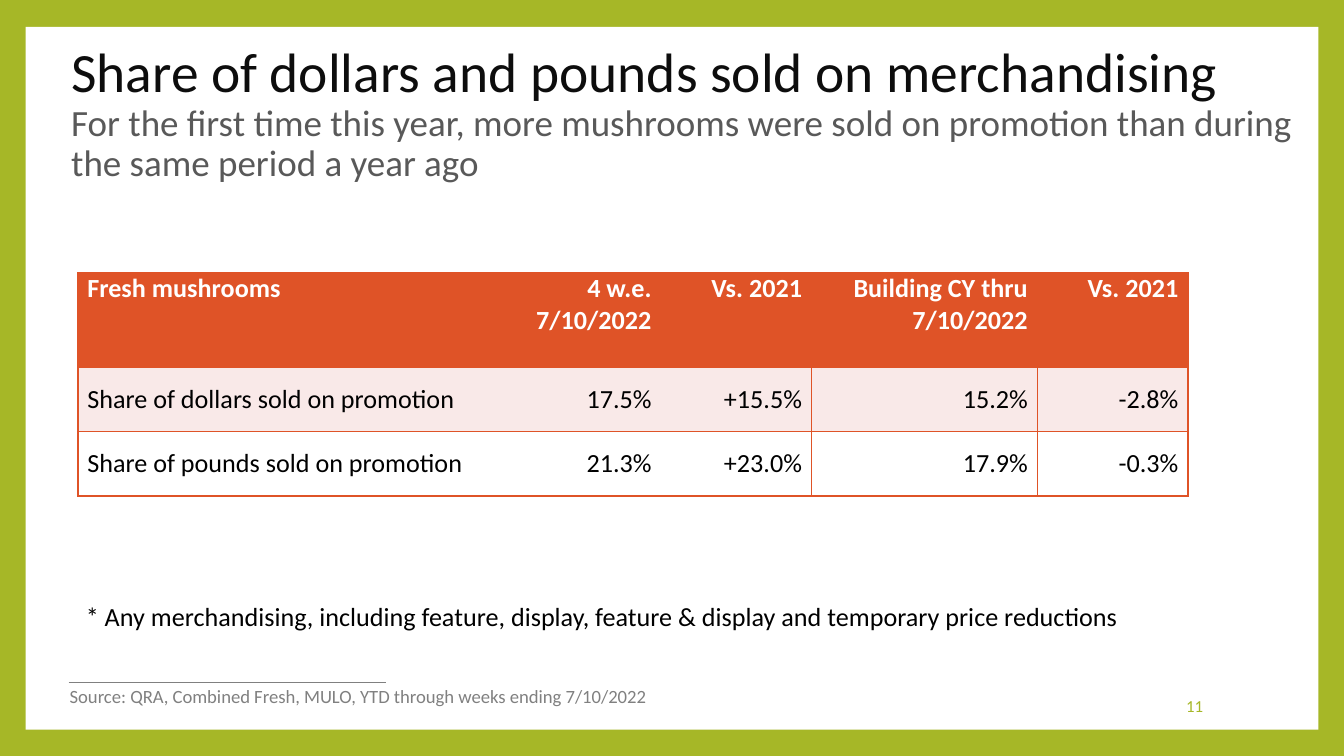
"""Build the slide on mushroom shares sold on merchandising."""
from lxml.etree import SubElement
from pptx import Presentation
from pptx.dml.color import RGBColor
from pptx.enum.shapes import MSO_CONNECTOR, MSO_SHAPE
from pptx.enum.text import MSO_ANCHOR, MSO_AUTO_SIZE, PP_ALIGN
from pptx.oxml.ns import qn
from pptx.util import Inches, Pt

WIDTH = 10
HEIGHT = WIDTH * 9 / 16
FONT = "Calibri"
COLORS = {
    "green": "A6B727", "orange": "DF5327", "blush": "F9E9E8", "white": "FFFFFF",
    "black": "000000", "ink": "0D0D0D", "slate": "595959", "gray": "808080",
}
TITLE = "Share of dollars and pounds sold on merchandising"
SUBTITLE = ("For the first time this year, more mushrooms were sold on promotion "
            "than during the same period a year ago")
NOTE = ("* Any merchandising, including feature, display, feature & display "
        "and temporary price reductions")
SOURCE = "Source: QRA, Combined Fresh, MULO, YTD through weeks ending 7/10/2022"
PAGE_NUMBER = "11"
ROWS = [
    ["Fresh mushrooms", "4 w.e. 7/10/2022", "Vs. 2021", "Building CY thru 7/10/2022", "Vs. 2021"],
    ["Share of dollars sold on promotion", "17.5%", "+15.5%", "15.2%", "-2.8%"],
    ["Share of pounds sold on promotion", "21.3%", "+23.0%", "17.9%", "-0.3%"],
]
ROW_FILLS = ["orange", "blush", "white"]
COLUMN_WIDTHS = [3.06, 0.13, 1.1, 1.12, 1.68, 1.12]
ROW_HEIGHTS = [0.7, 0.48, 0.48]
RULED_EDGES = {0, 4, 5, 6}


def color(name):
    """Return the named palette color."""
    return RGBColor.from_string(COLORS[name])


def add_span(para, text, size, ink, bold=False):
    """Append formatted text to a paragraph."""
    span = para.add_run()
    span.text = text
    span.font.name, span.font.size, span.font.bold = FONT, Pt(size), bold
    span.font.color.rgb = color(ink)


def add_text(page, text, left, top, width, height, size, ink,
             align=PP_ALIGN.LEFT, anchor=MSO_ANCHOR.TOP, wrap=False):
    """Add a one-paragraph text box."""
    box = page.shapes.add_textbox(*map(Inches, (left, top, width, height)))
    frame = box.text_frame
    frame.word_wrap, frame.vertical_anchor = wrap, anchor
    para = frame.paragraphs[0]
    para.alignment = align
    add_span(para, text, size, ink)


def set_borders(cell, first, last):
    """Rule the top and bottom, and the sides that lie on ruled edges."""
    properties = cell._tc.get_or_add_tcPr()
    shown = {"lnL": first in RULED_EDGES, "lnR": last in RULED_EDGES, "lnT": True, "lnB": True}
    for position, (tag, visible) in enumerate(shown.items()):
        line = SubElement(properties, qn(f"a:{tag}"), w=str(Pt(1)))
        if visible:
            fill = SubElement(line, qn("a:solidFill"))
            SubElement(fill, qn("a:srgbClr"), val=COLORS["orange"])
        else:
            SubElement(line, qn("a:noFill"))
        properties.insert(position, line)


def add_title(page):
    """Format the title placeholder with its title and subtitle."""
    title = page.shapes.title
    title.left, title.top, title.width, title.height = map(Inches, (0.43, 0.31, 9.29, 1.09))
    frame = title.text_frame
    frame.word_wrap, frame.auto_size = True, MSO_AUTO_SIZE.NONE
    frame.vertical_anchor = MSO_ANCHOR.MIDDLE
    para = frame.paragraphs[0]
    para.alignment, para.line_spacing = PP_ALIGN.LEFT, 0.9
    add_span(para, TITLE, 29.7, "ink")
    para.add_line_break()
    add_span(para, SUBTITLE, 19.8, "slate")


def add_share_table(page):
    """Add the table, with the narrow second column merged left or right."""
    table = page.shapes.add_table(
        len(ROWS), len(COLUMN_WIDTHS), Inches(0.58), Inches(2.03),
        Inches(sum(COLUMN_WIDTHS)), Inches(sum(ROW_HEIGHTS))).table
    for column, width in zip(table.columns, COLUMN_WIDTHS):
        column.width = Inches(width)
    for row, height in zip(table.rows, ROW_HEIGHTS):
        row.height = Inches(height)
    for row, (texts, fill) in enumerate(zip(ROWS, ROW_FILLS)):
        header = row == 0
        starts = [0, 1 if header else 2, 3, 4, 5]
        ends = starts[1:] + [len(COLUMN_WIDTHS)]
        for text, first, last in zip(texts, starts, ends):
            cell = table.cell(row, first)
            if last - first > 1:
                cell.merge(table.cell(row, last - 1))
            cell.margin_left = cell.margin_right = Inches(0.07)
            cell.margin_top = cell.margin_bottom = 0
            cell.vertical_anchor = MSO_ANCHOR.TOP if header else MSO_ANCHOR.MIDDLE
            para = cell.text_frame.paragraphs[0]
            para.alignment = PP_ALIGN.RIGHT if first else PP_ALIGN.LEFT
            add_span(para, text, 14, "white" if header else "black", bold=header)
            for column in range(first, last):
                part = table.cell(row, column)
                part.fill.solid()
                part.fill.fore_color.rgb = color(fill)
                set_borders(part, first, last)


def main():
    """Assemble and save the slide."""
    deck = Presentation()
    deck.slide_width, deck.slide_height = Inches(WIDTH), Inches(HEIGHT)
    page = deck.slides.add_slide(deck.slide_layouts[5])
    page.background.fill.solid()
    page.background.fill.fore_color.rgb = color("green")

    panel = page.shapes.add_shape(
        MSO_SHAPE.RECTANGLE, *map(Inches, (0.19, 0.2, WIDTH - 0.38, 5.23)))
    panel.shadow.inherit = False
    panel.fill.solid()
    panel.fill.fore_color.rgb = color("white")
    panel.line.fill.background()
    page.shapes._spTree.insert(2, panel._element)

    rule = page.shapes.add_connector(
        MSO_CONNECTOR.STRAIGHT, *map(Inches, (0.51, 5.08, 2.87, 5.08)))
    rule.line.color.rgb, rule.line.width = color("gray"), Pt(0.79)
    SubElement(rule._element.spPr, qn("a:effectLst"))

    add_title(page)
    add_text(page, PAGE_NUMBER, 7.65, 5.1, 1.4, 0.3, 9, "green",
             align=PP_ALIGN.RIGHT, anchor=MSO_ANCHOR.MIDDLE, wrap=True)
    add_text(page, SOURCE, 0.42, 5.05, 4.52, 0.27, 10, "gray")
    add_text(page, NOTE, 0.54, 4.42, 8.1, 0.34, 14, "black")
    add_share_table(page)
    deck.save("out.pptx")


if __name__ == "__main__":
    main()
